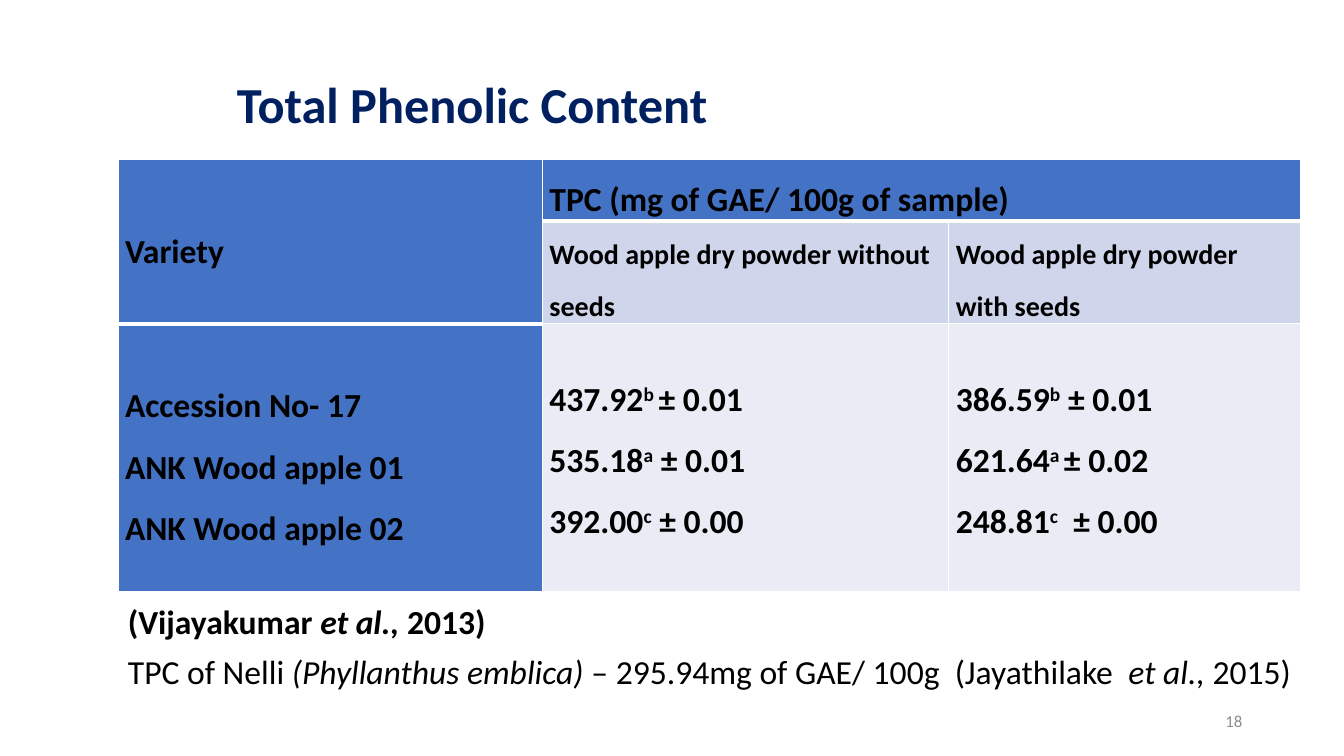
from dataclasses import dataclass

from lxml import etree
from pptx import Presentation
from pptx.dml.color import RGBColor
from pptx.enum import text
from pptx.oxml import ns
from pptx.util import Inches, Pt

COLORS = {
    "title": "002060", "text": "000000", "number": "8C8C8C", "line": "FFFFFF",
    "header": "4472C4", "subheader": "CFD5EA", "values": "E9EBF5",
}
FONT = "Calibri"
MIDDLE = text.MSO_ANCHOR.MIDDLE


@dataclass
class Run:
    text: str
    bold: bool = False
    italic: bool = False
    raised: bool = False


@dataclass
class Cell:
    row: int
    column: int
    paragraphs: list[list[Run]]
    fill: str
    size: int = 24
    spacing: float = 1.5
    after: int = 0
    top: float = 0
    border_bottom: int = 1


@dataclass
class Label:
    box: tuple[float, float, float, float]
    runs: list[Run]
    size: int = 24
    color: str = "text"
    align: text.PP_ALIGN = text.PP_ALIGN.LEFT
    anchor: text.MSO_ANCHOR = text.MSO_ANCHOR.TOP


def set_values(target, values: dict) -> None:
    for name, value in values.items():
        setattr(target, name, value)


def place(shape, box: tuple[float, float, float, float]) -> None:
    names = ("left", "top", "width", "height")
    set_values(shape, dict(zip(names, map(Inches, box))))


def write_runs(paragraph, runs: list[Run], size: int, color: str) -> None:
    for item in runs:
        run = paragraph.add_run()
        run.text = item.text
        set_values(run.font, {"name": FONT, "size": Pt(size),
                              "bold": item.bold, "italic": item.italic})
        run.font.color.rgb = RGBColor.from_string(COLORS[color])
        if item.raised:
            run._r.get_or_add_rPr().set("baseline", "30000")


def fill_label(shape, label: Label) -> None:
    place(shape, label.box)
    set_values(shape.text_frame, {"word_wrap": True, "vertical_anchor": label.anchor})
    paragraph = shape.text_frame.paragraphs[0]
    paragraph.alignment = label.align
    write_runs(paragraph, label.runs, label.size, label.color)


def add_borders(cell, bottom: int = 1) -> None:
    properties = cell._tc.get_or_add_tcPr()
    for side, width in (("L", 1), ("R", 1), ("T", 1), ("B", bottom)):
        line = etree.SubElement(properties, ns.qn(f"a:ln{side}"), w=str(Pt(width)))
        fill = etree.SubElement(line, ns.qn("a:solidFill"))
        etree.SubElement(fill, ns.qn("a:srgbClr"), val=COLORS["line"])


def fill_cell(table, item: Cell) -> None:
    cell = table.cell(item.row, item.column)
    set_values(cell, {"margin_left": Inches(0.07), "margin_right": Inches(0.07),
                      "margin_top": Inches(item.top), "margin_bottom": 0,
                      "vertical_anchor": MIDDLE})
    add_borders(cell, item.border_bottom)
    cell.fill.solid()
    cell.fill.fore_color.rgb = RGBColor.from_string(COLORS[item.fill])
    for index, runs in enumerate(item.paragraphs):
        frame = cell.text_frame
        paragraph = frame.add_paragraph() if index else frame.paragraphs[0]
        set_values(paragraph, {"line_spacing": item.spacing,
                               "space_after": Pt(item.after)})
        write_runs(paragraph, runs, item.size, "text")


def bold_lines(*lines: str) -> list[list[Run]]:
    return [[Run(line, bold=True)] for line in lines]


def measures(*rows: tuple[str, str, str]) -> list[list[Run]]:
    """Mean, raised significance letter and deviation on each line."""
    return [[Run(mean, bold=True), Run(letter, bold=True, raised=True),
             Run(deviation, bold=True)] for mean, letter, deviation in rows]


TITLE = Label((2.25, 0.28, 14.4, 1.5), [Run("Total Phenolic Content", bold=True)],
              36, "title", anchor=MIDDLE)
LABELS = [
    Label((1.17, 5.91, 4, 0.5), [
        Run("(Vijayakumar ", bold=True), Run("et al., ", bold=True, italic=True),
        Run("2013)", bold=True)]),
    Label((1.17, 6.41, 13.08, 0.5), [
        Run("TPC of Nelli "), Run("(Phyllanthus emblica) ", italic=True),
        Run("– 295.94mg of GAE/ 100g  (Jayathilake  "),
        Run("et al., ", italic=True), Run("2015)")]),
    Label((9.42, 6.95, 3, 0.4), [Run("18")], 12, "number",
          text.PP_ALIGN.RIGHT, MIDDLE),
]
VALUE_FORMAT = {"fill": "values", "spacing": 1.15, "after": 10, "top": 0.01}
CELLS = [
    Cell(0, 0, bold_lines("Variety"), "header", border_bottom=3),
    Cell(0, 1, bold_lines("TPC (mg of GAE/ 100g of sample)"), "header",
         border_bottom=3),
    Cell(1, 1, bold_lines("Wood apple dry powder without seeds"), "subheader", 20),
    Cell(1, 2, bold_lines("Wood apple dry powder with seeds"), "subheader", 20),
    Cell(2, 0, bold_lines("Accession No- 17", "ANK Wood apple 01",
                          "ANK Wood apple 02"), "header"),
    Cell(2, 1, measures(("437.92", "b ", "± 0.01"), ("535.18", "a", " ± 0.01"),
                        ("392.00", "c", " ± 0.00")), **VALUE_FORMAT),
    Cell(2, 2, measures(("386.59", "b", " ± 0.01"), ("621.64", "a ", "± 0.02"),
                        ("248.81", "c", "  ± 0.00")), **VALUE_FORMAT),
]
COLUMN_WIDTHS = (4.21, 4.03, 3.49)
ROW_HEIGHTS = (0.55, 0.9, 2.66)


def add_phenolic_table(slide) -> None:
    table = slide.shapes.add_table(
        len(ROW_HEIGHTS), len(COLUMN_WIDTHS), Inches(1.17), Inches(1.58),
        Inches(sum(COLUMN_WIDTHS)), Inches(sum(ROW_HEIGHTS))).table
    for column, width in zip(table.columns, COLUMN_WIDTHS):
        column.width = Inches(width)
    for row, height in zip(table.rows, ROW_HEIGHTS):
        row.height = Inches(height)
    table.cell(0, 0).merge(table.cell(1, 0))
    table.cell(0, 1).merge(table.cell(0, 2))
    for item in CELLS:
        fill_cell(table, item)
    # Cells covered by a merge carry the same borders
    for row, column in ((1, 0), (0, 2)):
        add_borders(table.cell(row, column))


def main() -> None:
    presentation = Presentation()
    set_values(presentation, {"slide_width": Inches(13.33),
                              "slide_height": Inches(7.5)})
    slide = presentation.slides.add_slide(presentation.slide_layouts[5])

    # Title
    fill_label(slide.shapes.title, TITLE)

    # Table of results
    add_phenolic_table(slide)

    # Citations and slide number
    for label in LABELS:
        fill_label(slide.shapes.add_textbox(0, 0, 0, 0), label)

    presentation.save("out.pptx")


if __name__ == "__main__":
    main()
